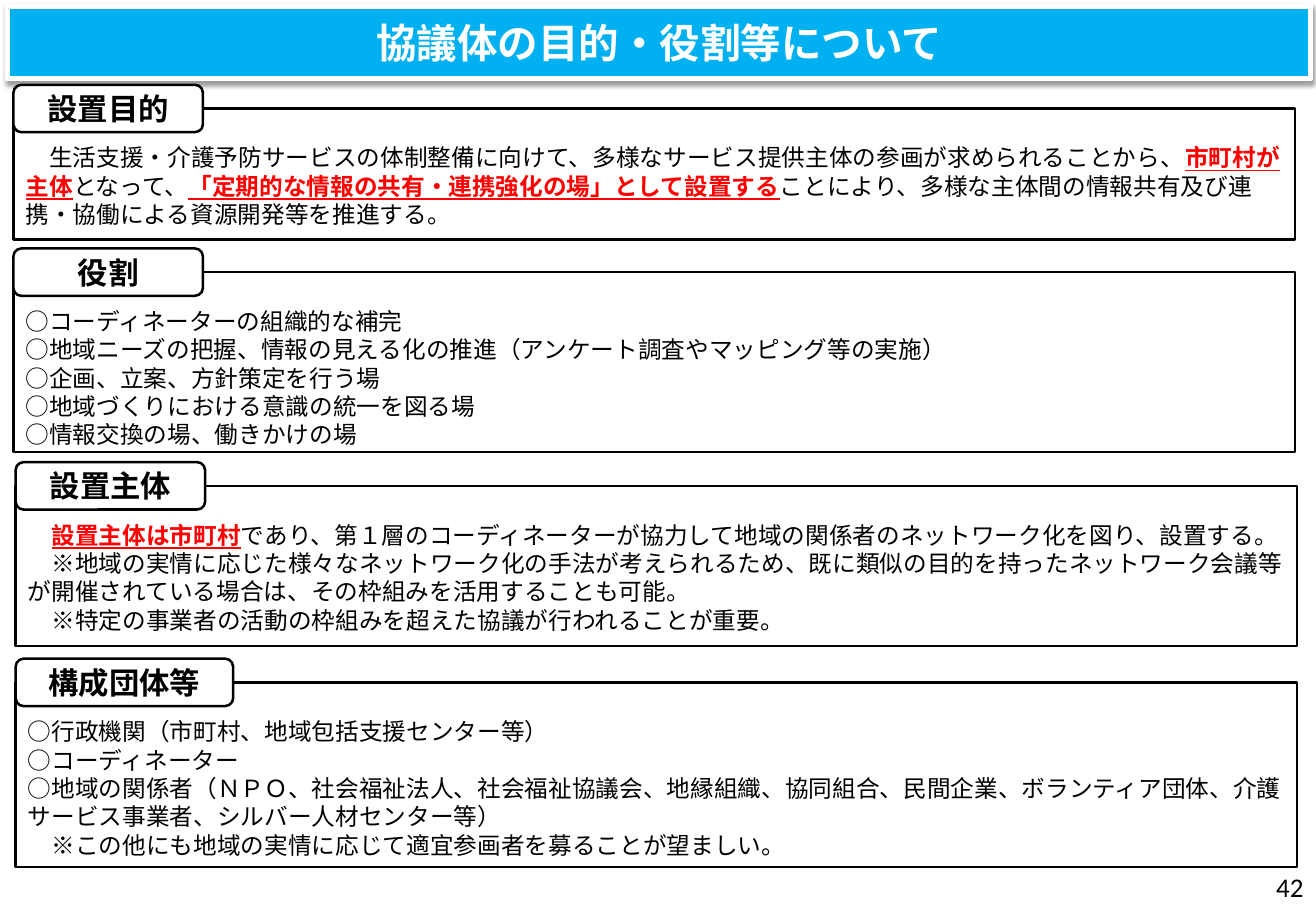
from lxml.etree import SubElement
from pptx import Presentation
from pptx.dml.color import RGBColor as RGB
from pptx.enum.shapes import MSO_SHAPE as Shape
from pptx.enum.text import MSO_ANCHOR as Anchor, MSO_AUTO_SIZE as AutoSize, PP_ALIGN as Align
from pptx.oxml import parse_xml
from pptx.util import Pt

COLORS = {"ink": "000000", "paper": "FFFFFF", "key": "FF0000", "banner": "00B0F0"}
TITLE = "協議体の目的・役割等について"
PAGE_NUMBER = "42"

# A run given as a tuple is emphasised.
SECTIONS = [
    {"heading": "設置目的", "left": 8, "top": 64.3, "height": 77.6, "tag_width": 112.3, "lines": [
        ["\u3000生活支援・介護予防サービスの体制整備に向けて、多様なサービス提供主体の参画が求められることから、",
         ("市町村が主体",), "となって、", ("「定期的な情報の共有・連携強化の場」として設置する",),
         "ことにより、多様な主体間の情報共有及び連携・協働による資源開発等を推進する。"]]},
    {"heading": "役割", "left": 8, "top": 161.3, "height": 106.6, "tag_width": 112.3, "lines": [
        ["○コーディネーターの組織的な補完"],
        ["○地域ニーズの把握、情報の見える化の推進（アンケート調査やマッピング等の実施）"],
        ["○企画、立案、方針策定を行う場"],
        ["○地域づくりにおける意識の統一を図る場"],
        ["○情報交換の場、働きかけの場"]]},
    {"heading": "設置主体", "left": 9.3, "top": 288, "height": 95, "tag_width": 112.3, "lines": [
        ["\u3000", ("設置主体は市町村",),
         "であり、第１層のコーディネーターが協力して地域の関係者のネットワーク化を図り、設置する。"],
        ["\u3000※地域の実情に応じた様々なネットワーク化の手法が考えられるため、既に類似の目的を持った"
         "ネットワーク会議等が開催されている場合は、その枠組みを活用することも可能。"],
        ["\u3000※特定の事業者の活動の枠組みを超えた協議が行われることが重要。"]]},
    {"heading": "構成団体等", "left": 9.3, "top": 404.5, "height": 109.4, "tag_width": 128.9, "lines": [
        ["○行政機関（市町村、地域包括支援センター等）"],
        ["○コーディネーター"],
        ["○地域の関係者（ＮＰＯ、社会福祉法人、社会福祉協議会、地縁組織、協同組合、民間企業、"
         "ボランティア団体、介護サービス事業者、シルバー人材センター等）"],
        ["\u3000※この他にも地域の実情に応じて適宜参画者を募ることが望ましい。"]]},
]
PANEL_WIDTH, TAG_HEIGHT, PANEL_INSET = 759.6, 28.1, 20.6
DRAWING = "http://schemas.openxmlformats.org/drawingml/2006/main"
BANNER_SHADOW = (
    f'<a:effectLst xmlns:a="{DRAWING}"><a:outerShdw blurRad="{Pt(3.1)}" dist="{Pt(1.6)}" dir="5400000" '
    f'rotWithShape="0"><a:srgbClr val="{COLORS["ink"]}"><a:alpha val="38000"/></a:srgbClr>'
    '</a:outerShdw></a:effectLst>')


def color(name):
    return RGB.from_string(COLORS[name])


def place(shape, left, top, width, height):
    shape.left, shape.top, shape.width, shape.height = Pt(left), Pt(top), Pt(width), Pt(height)


def outline(shape, ink="ink", weight=1.5, fill=None):
    if fill:
        shape.fill.solid()
        shape.fill.fore_color.rgb = color(fill)
    shape.line.color.rgb = color(ink)
    shape.line.width = Pt(weight)


def write(shape, lines, size=14, font="Calibri", ink="ink", bold=False,
          align=Align.LEFT, anchor=Anchor.MIDDLE, inset_top=3.6):
    frame = shape.text_frame
    frame.word_wrap, frame.auto_size = True, AutoSize.NONE
    frame.vertical_anchor, frame.margin_top = anchor, Pt(inset_top)
    for index, line in enumerate(lines):
        paragraph = frame.add_paragraph() if index else frame.paragraphs[0]
        paragraph.alignment = align
        paragraph.space_before = Pt(0)
        properties = paragraph._p.get_or_add_pPr()
        properties.set("marL", "0")
        properties.set("indent", "0")
        SubElement(properties, f"{{{DRAWING}}}buNone")
        for part in line:
            emphasised = isinstance(part, tuple)
            run = paragraph.add_run()
            run.text = part[0] if emphasised else part
            run.font.size, run.font.name = Pt(size), font
            run.font.bold = bold or emphasised
            run.font.underline = emphasised
            run.font.color.rgb = color("key" if emphasised else ink)


deck = Presentation()
deck.slide_width, deck.slide_height = Pt(780), Pt(540)
slide = deck.slides.add_slide(deck.slide_layouts.get_by_name("Comparison"))
banner, *panels = slide.placeholders

place(banner, 4.3, 3.6, 772.6, 43.2)
outline(banner, ink="paper", weight=3, fill="banner")
banner._element.spPr.append(parse_xml(BANNER_SHADOW))
write(banner, [[TITLE]], size=24, font="Arial", ink="paper", bold=True, align=Align.CENTER)

for panel, section in zip(panels, SECTIONS):
    left, top = section["left"], section["top"]
    place(panel, left, top, PANEL_WIDTH, section["height"])
    outline(panel)
    write(panel, section["lines"], anchor=Anchor.TOP, inset_top=PANEL_INSET)

    tag = slide.shapes.add_shape(Shape.ROUNDED_RECTANGLE, Pt(left), Pt(top - TAG_HEIGHT / 2),
                                 Pt(section["tag_width"]), Pt(TAG_HEIGHT))
    tag.shadow.inherit = False
    outline(tag, fill="paper")
    write(tag, [[section["heading"]]], size=18, bold=True, align=Align.CENTER)

page = slide.shapes.add_textbox(Pt(735.8), Pt(511.2), Pt(43.9), Pt(28.8))
write(page, [[PAGE_NUMBER]], size=16, align=Align.RIGHT)

deck.save("out.pptx")
